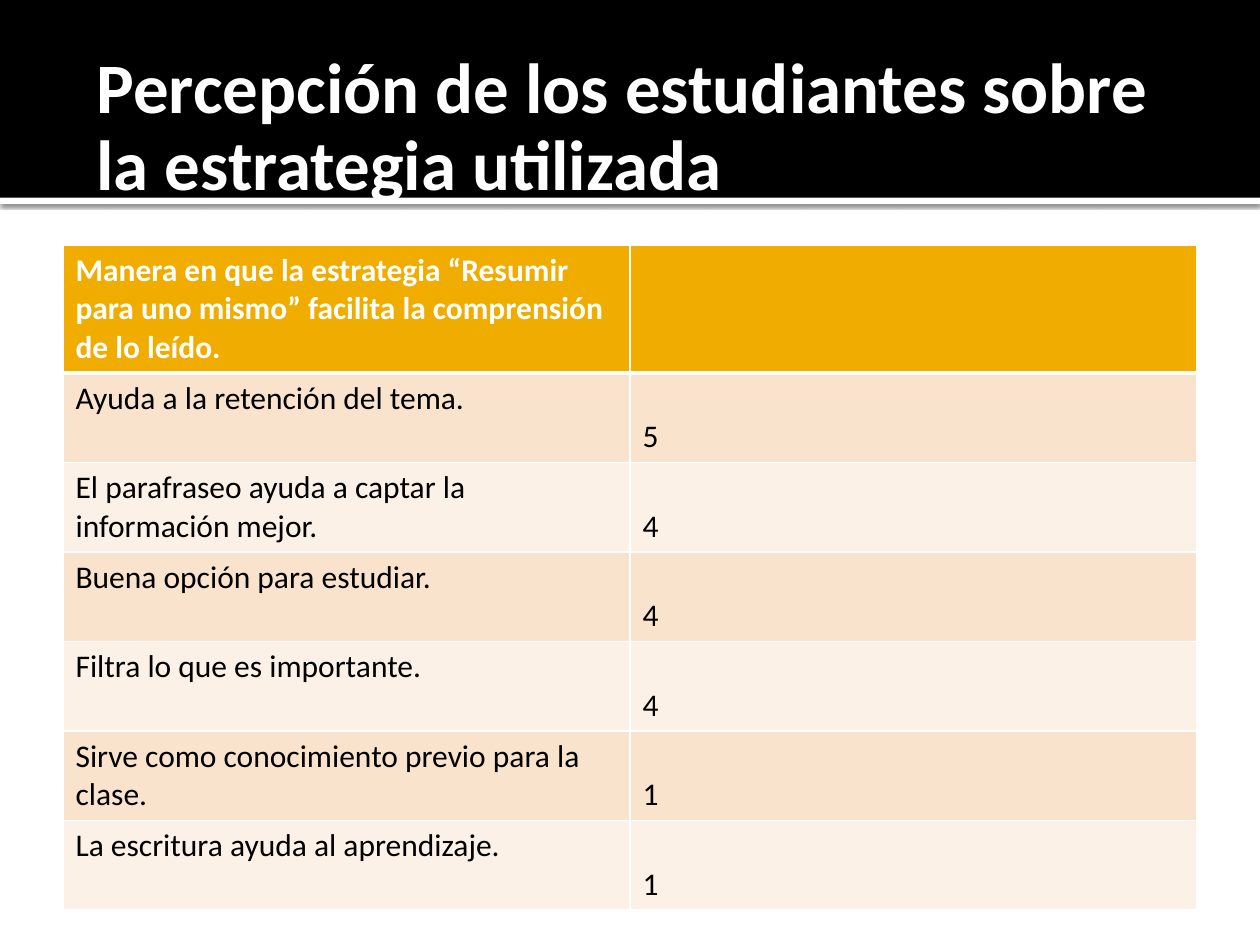
"""Builds the slide on how students see the reading strategy."""
from lxml import etree
from pptx import Presentation
from pptx import util as u
from pptx.dml.color import RGBColor
from pptx.enum import shapes, text
from pptx.oxml import ns

Pt = u.Pt
FONT = "Calibri"
HUES = {"white": "FFFFFF", "black": "000000", "gold": "F0AD00",
        "peach": "F9E3CC", "cream": "FCF1E7"}
HEAD = "Manera en que la estrategia “Resumir para uno mismo” facilita la comprensión de lo leído."
ROWS = [
    (HEAD, ""),
    ("Ayuda a la retención del tema.", "5"),
    ("El parafraseo ayuda a captar la información mejor.", "4"),
    ("Buena opción para estudiar.", "4"),
    ("Filtra lo que es importante.", "4"),
    ("Sirve como conocimiento previo para la clase.", "1"),
    ("La escritura ayuda al aprendizaje.", "1"),
]


def write(para, words, size, hue, bold):
    run = para.add_run()
    run.text = words
    run.font.name = FONT
    run.font.size = Pt(size)
    run.font.bold = bold
    run.font.color.rgb = RGBColor.from_string(HUES[hue])


def node(base, tag, **attrs):
    return etree.SubElement(base, ns.qn(tag), attrs)


deck = Presentation()
deck.slide_width, deck.slide_height = Pt(720), Pt(540)
slide = deck.slides.add_slide(deck.slide_layouts[5])
tree = slide.shapes

for top, high, hue in [(113, 3.6, "white"), (0, 113, "black")]:
    band = tree.add_shape(shapes.MSO_SHAPE.RECTANGLE, 0, Pt(top), Pt(720), Pt(high))
    band.shadow.inherit = False
    band.fill.solid()
    band.fill.fore_color.rgb = RGBColor.from_string(HUES[hue])
    band.line.fill.background()
    if hue == "white":
        glow = node(band.element.spPr.find(ns.qn("a:effectLst")), "a:outerShdw",
                    blurRad=str(Pt(2.5)), dist=str(Pt(0.8)), dir="5400000",
                    algn="t", rotWithShape="0")
        shade = node(glow, "a:srgbClr", val=HUES["black"])
        node(shade, "a:alpha", val="60000")

grid = tree.add_table(len(ROWS), 2, Pt(36), Pt(140), Pt(648), Pt(380)).table
grid.horz_banding = False
for i, row in enumerate(ROWS):
    grid.rows[i].height = Pt(51.15 if i else 73)
    fill = ("cream", "peach")[i % 2] if i else "gold"
    for j, words in enumerate(row):
        cell = grid.cell(i, j)
        props = cell._tc.get_or_add_tcPr()
        wide = {"L": 1, "R": 1, "T": 3 if i == 1 else 1, "B": 1 if i else 3}
        for side, width in wide.items():
            edge = node(props, "a:ln" + side, w=str(Pt(width)))
            node(node(edge, "a:solidFill"), "a:srgbClr", val=HUES["white"])
        cell.fill.solid()
        cell.fill.fore_color.rgb = RGBColor.from_string(HUES[fill])
        cell.vertical_anchor = text.MSO_ANCHOR.BOTTOM if j else text.MSO_ANCHOR.TOP
        if words:
            write(cell.text_frame.paragraphs[0], words, 18,
                  "black" if i else "white", i == 0)

title = tree.title
title.left, title.top, title.width, title.height = Pt(48), Pt(24.5), Pt(648), Pt(98.5)
frame = title.text_frame
frame.word_wrap = True
frame.auto_size = text.MSO_AUTO_SIZE.NONE
frame.vertical_anchor = text.MSO_ANCHOR.MIDDLE
frame.margin_left = Pt(7.2)
frame.margin_right = frame.margin_top = frame.margin_bottom = Pt(3.6)
para = frame.paragraphs[0]
para.alignment = text.PP_ALIGN.LEFT
para.line_spacing = 0.9
write(para, "Percepción de los estudiantes sobre la estrategia utilizada", 40.5, "white", True)
title.element.getparent().append(title.element)

deck.save("out.pptx")
